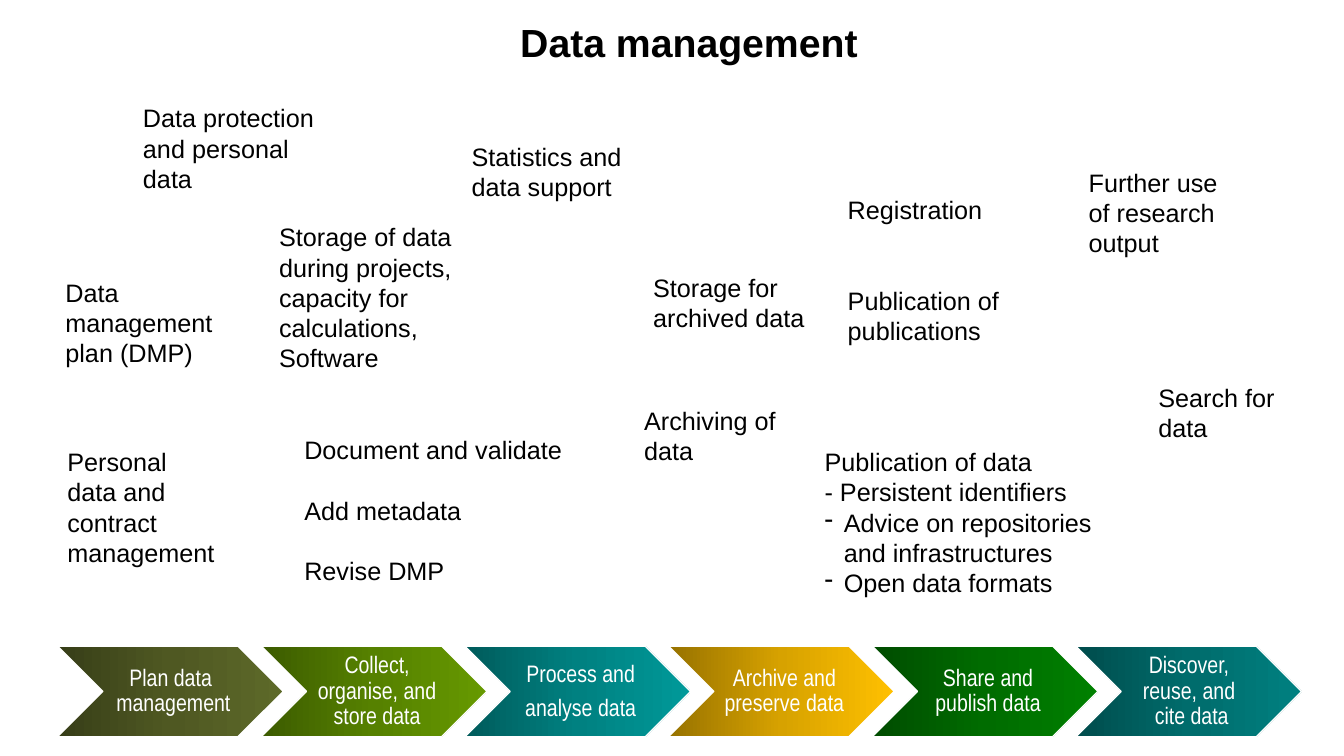
"""Build the data management slide: support topics above a chain of six stages."""
from collections import namedtuple
from copy import deepcopy
from dataclasses import dataclass

from lxml import etree
from pptx import Presentation
from pptx.dml import color
from pptx.enum import shapes, text
from pptx.oxml import ns
from pptx.util import Inches, Pt

Line = namedtuple("Line", "words gap dash", defaults=(0, False))


@dataclass(frozen=True)
class Theme:
    """Colours, type formats and frame formats."""
    ink: str = "000000"
    paper: str = "FFFFFF"
    title = {"name": "Arial", "size": Pt(28), "bold": True}
    topic = {"name": "Arial", "size": Pt(18)}
    stage = {"name": "Arial Narrow", "size": Pt(17)}
    title_frame = {"word_wrap": False, "vertical_anchor": text.MSO_ANCHOR.TOP,
                   "auto_size": text.MSO_AUTO_SIZE.SHAPE_TO_FIT_TEXT}
    topic_frame = {"word_wrap": True,
                   "auto_size": text.MSO_AUTO_SIZE.SHAPE_TO_FIT_TEXT}
    stage_frame = {"word_wrap": True, "vertical_anchor": text.MSO_ANCHOR.MIDDLE,
                   "margin_left": Inches(0.07), "margin_right": Inches(0.02),
                   "margin_top": Inches(0.02), "margin_bottom": Inches(0.02)}
    left = {"alignment": text.PP_ALIGN.LEFT}
    centred = {"alignment": text.PP_ALIGN.CENTER, "line_spacing": 0.9,
               "space_after": Pt(6)}


def apply(target, values):
    """Set every attribute named in values on target."""
    for name, value in values.items():
        setattr(target, name, value)


class SlideBuilder:
    """Draws titles, topics and stages on one slide."""

    def __init__(self, slide, theme):
        """Keep the slide and its theme."""
        self.slide, self.theme = slide, theme

    def fill_frame(self, frame, lines, frame_format, paragraph_format, font, ink):
        """Fill a text frame with formatted lines."""
        apply(frame, frame_format)
        for index, line in enumerate(lines):
            paragraph = frame.add_paragraph() if index else frame.paragraphs[0]
            paragraph.text = line.words
            if line.dash:
                self.add_dash(paragraph)
            apply(paragraph, paragraph_format)
            if line.gap:
                paragraph.space_before = Pt(line.gap)
            for run in paragraph.runs:
                apply(run.font, font)
                run.font.color.rgb = color.RGBColor.from_string(ink)

    def add_dash(self, paragraph):
        """Give a paragraph a hanging dash."""
        properties = paragraph._p.get_or_add_pPr()
        properties.set("marL", str(Inches(0.19)))
        properties.set("indent", str(-Inches(0.19)))
        etree.SubElement(properties, ns.qn("a:buChar")).set("char", "-")

    def title(self, words, box):
        """Place and format the title."""
        heading = self.slide.shapes.title
        apply(heading, dict(zip(("left", "top", "width", "height"), map(Inches, box))))
        self.fill_frame(heading.text_frame, [Line(words)], self.theme.title_frame,
                        self.theme.left, self.theme.title, self.theme.ink)

    def topic(self, box, *lines):
        """Add a support topic."""
        note = self.slide.shapes.add_textbox(*map(Inches, box))
        self.fill_frame(note.text_frame, lines, self.theme.topic_frame,
                        self.theme.left, self.theme.topic, self.theme.ink)

    def stage(self, left, shades, lines):
        """Add a shaded chevron and its label."""
        top, height = 6.41, 0.9
        chevron = self.slide.shapes.add_shape(
            shapes.MSO_SHAPE.CHEVRON, *map(Inches, (left, top, 2.24, height)))
        chevron.shadow.inherit = False
        chevron.line.color.rgb = color.RGBColor.from_string(self.theme.paper)
        chevron.line.width = Pt(1)
        chevron.fill.gradient()
        chevron.fill.gradient_angle = 0
        first_stop = chevron._element.spPr.find(".//" + ns.qn("a:gs"))
        first_stop.addnext(deepcopy(first_stop))
        for stop, position, shade in zip(chevron.fill.gradient_stops, (0, 0.5, 1), shades):
            stop.position = position
            stop.color.rgb = color.RGBColor.from_string(shade)
        label = self.slide.shapes.add_textbox(
            *map(Inches, (left + 0.45, top, 1.35, height)))
        self.fill_frame(label.text_frame, lines, self.theme.stage_frame,
                        self.theme.centred, self.theme.stage, self.theme.paper)


TOPICS = [
    ((0.55, 2.7, 1.88, 1.01), Line("Data management plan (DMP)")),
    ((0.57, 4.38, 1.7, 1.31), Line("Personal data and contract management")),
    ((2.92, 4.26, 2.83, 1.62), Line("Document and validate"),
     Line("Add metadata", 21.6), Line("Revise DMP", 21.6)),
    ((2.67, 2.15, 2.21, 1.62),
     Line("Storage of data during projects, capacity for calculations, Software")),
    ((4.58, 1.35, 2.21, 0.71), Line("Statistics and data support")),
    ((6.29, 3.97, 1.7, 0.71), Line("Archiving of data")),
    ((6.38, 2.65, 1.7, 1.01), Line("Storage for archived data")),
    ((8.08, 4.38, 2.91, 1.62), Line("Publication of data"),
     Line("- Persistent identifiers"),
     Line("Advice on repositories and infrastructures", dash=True),
     Line("Open data formats", dash=True)),
    ((8.31, 1.88, 2.03, 1.62), Line("Registration"),
     Line("Publication of publications", 43.2)),
    ((1.32, 0.97, 2.03, 1.01), Line("Data protection and personal data")),
    ((11.39, 3.74, 1.7, 0.71), Line("Search for data")),
    ((10.7, 1.61, 1.7, 1.01), Line("Further use of research output")),
]

STAGES = [
    (("373E18", "4F5822", "5D6929"), [Line("Plan data \vmanagement")]),
    (("3C5B00", "568100", "669900"), [Line("Collect, organise, and store data")]),
    (("005B5B", "008181", "009999"), [Line("Process and"), Line("analyse data")]),
    (("977200", "D7A200", "FFC000"), [Line("Archive and preserve data")]),
    (("004C00", "006C00", "008000"), [Line("Share and publish data")]),
    (("004C4C", "006C6C", "008080"), [Line("Discover, \vreuse, and \vcite data")]),
]


def main():
    """Build and save the slide."""
    deck = Presentation()
    apply(deck, {"slide_width": Inches(13.33), "slide_height": Inches(7.5)})
    title_only = deck.slide_layouts.get_by_name("Title Only")
    builder = SlideBuilder(deck.slides.add_slide(title_only), Theme())
    builder.title("Data management", (5.06, 0.13, 3.7, 0.57))
    for box, *lines in TOPICS:
        builder.topic(box, *lines)
    for index, (shades, lines) in enumerate(STAGES):
        builder.stage(0.57 + 2.02 * index, shades, lines)
    deck.save("out.pptx")


if __name__ == "__main__":
    main()
